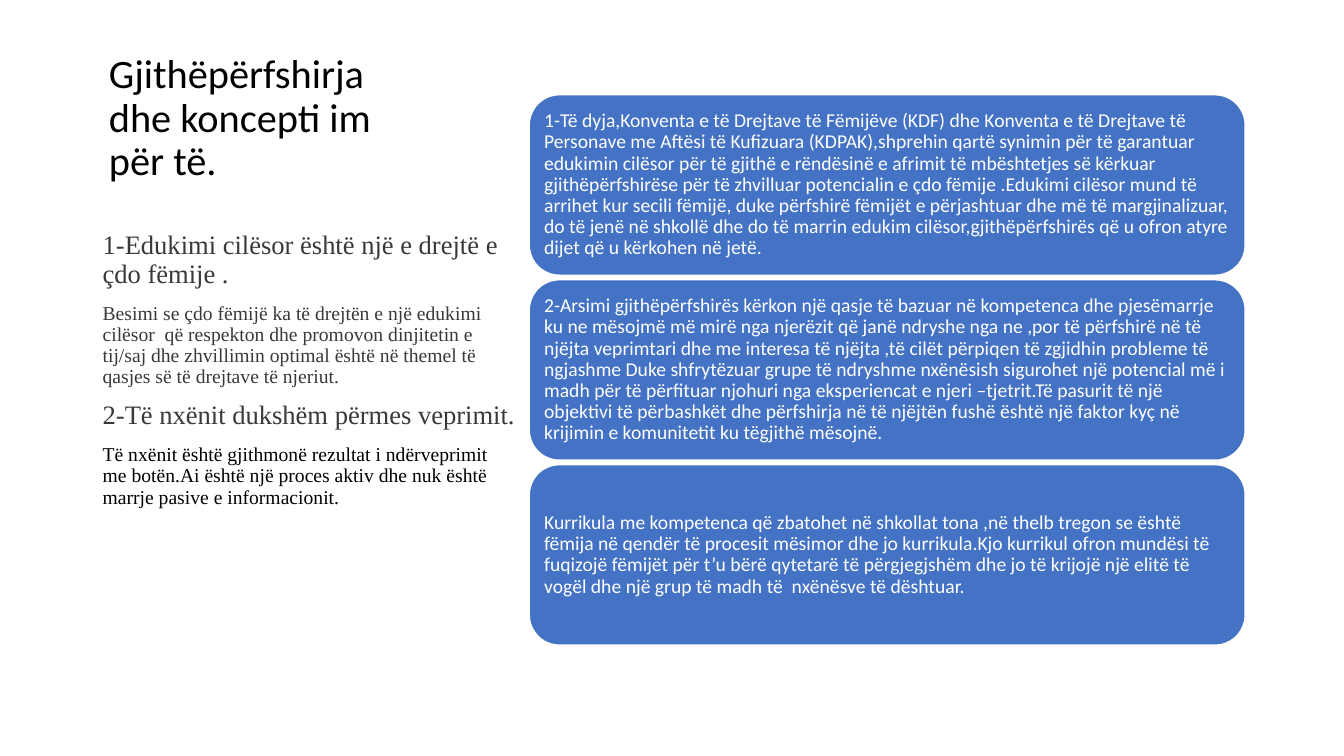
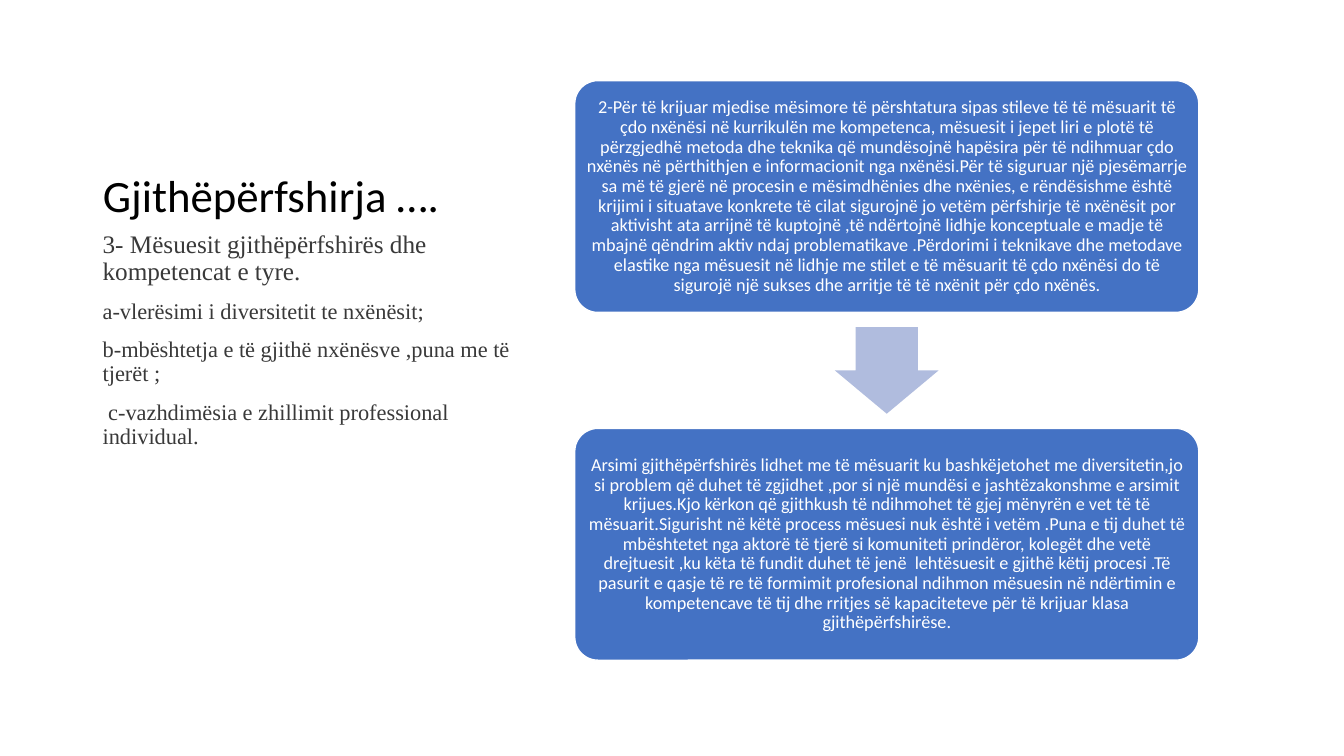
"""Build two slides on inclusive education, each with a caption column and a stack of cards."""
from pptx import Presentation
from pptx.dml.color import RGBColor
from pptx.enum import shapes, text
from pptx.util import Inches, Pt

BLUE = RGBColor(0x44, 0x72, 0xC4)
PALE_BLUE = RGBColor(0xB0, 0xBC, 0xDE)
WHITE = RGBColor(0xFF, 0xFF, 0xFF)
BLACK = RGBColor(0x00, 0x00, 0x00)
GREY = RGBColor(0x39, 0x39, 0x39)
SANS, SERIF = "Calibri", "Times New Roman"
LEFT, CENTER = text.PP_ALIGN.LEFT, text.PP_ALIGN.CENTER
BODY_BOX = (0.92, 2.25, 4.3, 4.17)

SLIDES = [
    {
        "title": "Gjithëpërfshirja dhe koncepti im për të.",
        "title_box": (0.98, 0.6, 3.16, 1.28),
        "title_size": 28.8,
        "body": [
            ("1-Edukimi cilësor është një e drejtë e çdo fëmije .", 19, GREY),
            ("Besimi se çdo fëmijë ka të drejtën e një edukimi cilësor  që respekton dhe promovon "
             "dinjitetin e tij/saj dhe zhvillimin optimal është në themel të qasjes së të drejtave "
             "të njeriut.", 14, GREY),
            ("2-Të nxënit dukshëm përmes veprimit.", 19, GREY),
            ("Të nxënit është gjithmonë rezultat i ndërveprimit me botën.Ai është një proces aktiv "
             "dhe nuk është marrje pasive e informacionit.", 14, BLACK),
        ],
        "first_card": (5.25, 0.94, 7.1, 1.79),
        "gap": 0.045,
        "corner": 0.1667,
        "inset": 0.06,
        "card_size": 14,
        "align": LEFT,
        "arrow": None,
        "cards": [
            "1-Të dyja,Konventa e të Drejtave të Fëmijëve (KDF) dhe Konventa e të Drejtave të "
            "Personave me Aftësi të Kufizuara (KDPAK),shprehin qartë synimin për të garantuar "
            "edukimin cilësor për të gjithë e rëndësinë e afrimit të mbështetjes së kërkuar "
            "gjithëpërfshirëse për të zhvilluar potencialin e çdo fëmije .Edukimi cilësor mund të "
            "arrihet kur secili fëmijë, duke përfshirë fëmijët e përjashtuar dhe më të "
            "margjinalizuar, do të jenë në shkollë dhe do të marrin edukim "
            "cilësor,gjithëpërfshirës që u ofron atyre dijet që u kërkohen në jetë.",
            "2-Arsimi gjithëpërfshirës kërkon një qasje të bazuar në kompetenca dhe pjesëmarrje "
            "ku ne mësojmë më mirë nga njerëzit që janë ndryshe nga ne ,por të përfshirë në të "
            "njëjta veprimtari dhe me interesa të njëjta ,të cilët përpiqen të zgjidhin probleme "
            "të ngjashme Duke shfrytëzuar grupe të ndryshme nxënësish sigurohet një potencial më i "
            "madh për të përfituar njohuri nga eksperiencat e njeri –tjetrit.Të pasurit të një "
            "objektivi të përbashkët dhe përfshirja në të njëjtën fushë është një faktor kyç në "
            "krijimin e komunitetit ku tëgjithë mësojnë.",
            "Kurrikula me kompetenca që zbatohet në shkollat tona ,në thelb tregon se është "
            "fëmija në qendër të procesit mësimor dhe jo kurrikula.Kjo kurrikul ofron mundësi të "
            "fuqizojë fëmijët për t’u bërë qytetarë të përgjegjshëm dhe jo të krijojë një elitë të "
            "vogël dhe një grup të madh të  nxënësve të dështuar.",
        ],
    },
    {
        "title": "Gjithëpërfshirja ….",
        "title_box": (0.92, 0.5, 4.3, 1.75),
        "title_size": 32,
        "body": [
            ("3- Mësuesit gjithëpërfshirës dhe kompetencat e tyre.", 18, GREY),
            ("a-vlerësimi i diversitetit te nxënësit;", 16, GREY),
            ("b-mbështetja e të gjithë nxënësve ,puna me të tjerët ;", 16, GREY),
            (" c-vazhdimësia e zhillimit professional individual.", 16, GREY),
        ],
        "first_card": (5.7, 0.8, 6.19, 2.3),
        "gap": 1.15,
        "corner": 0.1,
        "inset": 0.05,
        "card_size": 13,
        "align": CENTER,
        "arrow": (1.03, 0.86),
        "cards": [
            "2-Për të krijuar mjedise mësimore të përshtatura sipas stileve të të mësuarit të "
            "çdo nxënësi në kurrikulën me kompetenca, mësuesit i jepet liri e plotë të përzgjedhë "
            "metoda dhe teknika që mundësojnë hapësira për të ndihmuar çdo nxënës në përthithjen e "
            "informacionit nga nxënësi.Për të siguruar një pjesëmarrje sa më të gjerë në procesin "
            "e mësimdhënies dhe nxënies, e rëndësishme është krijimi i situatave konkrete të cilat "
            "sigurojnë jo vetëm përfshirje të nxënësit por aktivisht ata arrijnë të kuptojnë ,të "
            "ndërtojnë lidhje konceptuale e madje të mbajnë qëndrim aktiv ndaj problematikave "
            ".Përdorimi i teknikave dhe metodave elastike nga mësuesit në lidhje me stilet e të "
            "mësuarit të çdo nxënësi do të sigurojë një sukses dhe arritje të të nxënit për çdo "
            "nxënës.",
            "Arsimi gjithëpërfshirës lidhet me të mësuarit ku bashkëjetohet me diversitetin,jo "
            "si problem që duhet të zgjidhet ,por si një mundësi e jashtëzakonshme e arsimit "
            "krijues.Kjo kërkon që gjithkush të ndihmohet të gjej mënyrën e vet të të "
            "mësuarit.Sigurisht në këtë process mësuesi nuk është i vetëm .Puna e tij duhet të "
            "mbështetet nga aktorë të tjerë si komuniteti prindëror, kolegët dhe vetë drejtuesit "
            ",ku këta të fundit duhet të jenë  lehtësuesit e gjithë këtij procesi .Të pasurit e "
            "qasje të re të formimit profesional ndihmon mësuesin në ndërtimin e kompetencave të "
            "tij dhe rritjes së kapaciteteve për të krijuar klasa gjithëpërfshirëse.",
        ],
    },
]


def format_paragraph(paragraph, font_name, size, color, align=LEFT, before=0):
    paragraph.font.name = font_name
    paragraph.font.size = Pt(size)
    paragraph.font.color.rgb = color
    paragraph.alignment = align
    paragraph.line_spacing = 0.9
    paragraph.space_before = Pt(before)


def set_title(slide, content):
    title = slide.shapes.title
    title.left, title.top, title.width, title.height = map(Inches, content["title_box"])
    frame = title.text_frame
    frame.text = content["title"]
    frame.auto_size = text.MSO_AUTO_SIZE.NONE
    frame.vertical_anchor = text.MSO_ANCHOR.BOTTOM
    format_paragraph(frame.paragraphs[0], SANS, content["title_size"], BLACK)


def add_body(slide, lines):
    frame = slide.shapes.add_textbox(*map(Inches, BODY_BOX)).text_frame
    frame.word_wrap = True
    for index, (line, size, color) in enumerate(lines):
        paragraph = frame.add_paragraph() if index else frame.paragraphs[0]
        paragraph.text = line
        format_paragraph(paragraph, SERIF, size, color, before=10)


def add_filled(slide, kind, box, color, adjustments):
    shape = slide.shapes.add_shape(kind, *map(Inches, box))
    shape.shadow.inherit = False
    shape.fill.solid()
    shape.fill.fore_color.rgb = color
    shape.line.fill.background()
    for index, value in enumerate(adjustments):
        shape.adjustments[index] = value
    return shape


def add_card(slide, content, box, wording):
    card = add_filled(slide, shapes.MSO_SHAPE.ROUNDED_RECTANGLE, box, BLUE, [content["corner"]])
    card.line.color.rgb = WHITE
    card.line.width = Pt(1)
    frame = card.text_frame
    frame.word_wrap = True
    frame.vertical_anchor = text.MSO_ANCHOR.MIDDLE
    inset = Inches(content["inset"])
    frame.margin_left = frame.margin_top = frame.margin_right = frame.margin_bottom = inset
    frame.text = wording
    format_paragraph(frame.paragraphs[0], SANS, content["card_size"], WHITE, content["align"])


def add_cards(slide, content):
    left, first_top, width, height = content["first_card"]
    gap = content["gap"]
    for index, wording in enumerate(content["cards"]):
        top = first_top + index * (height + gap)
        if index and content["arrow"]:
            arrow_width, arrow_height = content["arrow"]
            box = (left + (width - arrow_width) / 2, top - (gap + arrow_height) / 2,
                   arrow_width, arrow_height)
            add_filled(slide, shapes.MSO_SHAPE.DOWN_ARROW, box, PALE_BLUE, [0.6, 0.5])
        add_card(slide, content, (left, top, width, height), wording)


def main():
    presentation = Presentation()
    presentation.slide_width, presentation.slide_height = Inches(13.33), Inches(7.5)
    for content in SLIDES:
        slide = presentation.slides.add_slide(presentation.slide_layouts[5])
        set_title(slide, content)
        add_cards(slide, content)
        add_body(slide, content["body"])
    presentation.save("out.pptx")


if __name__ == "__main__":
    main()
